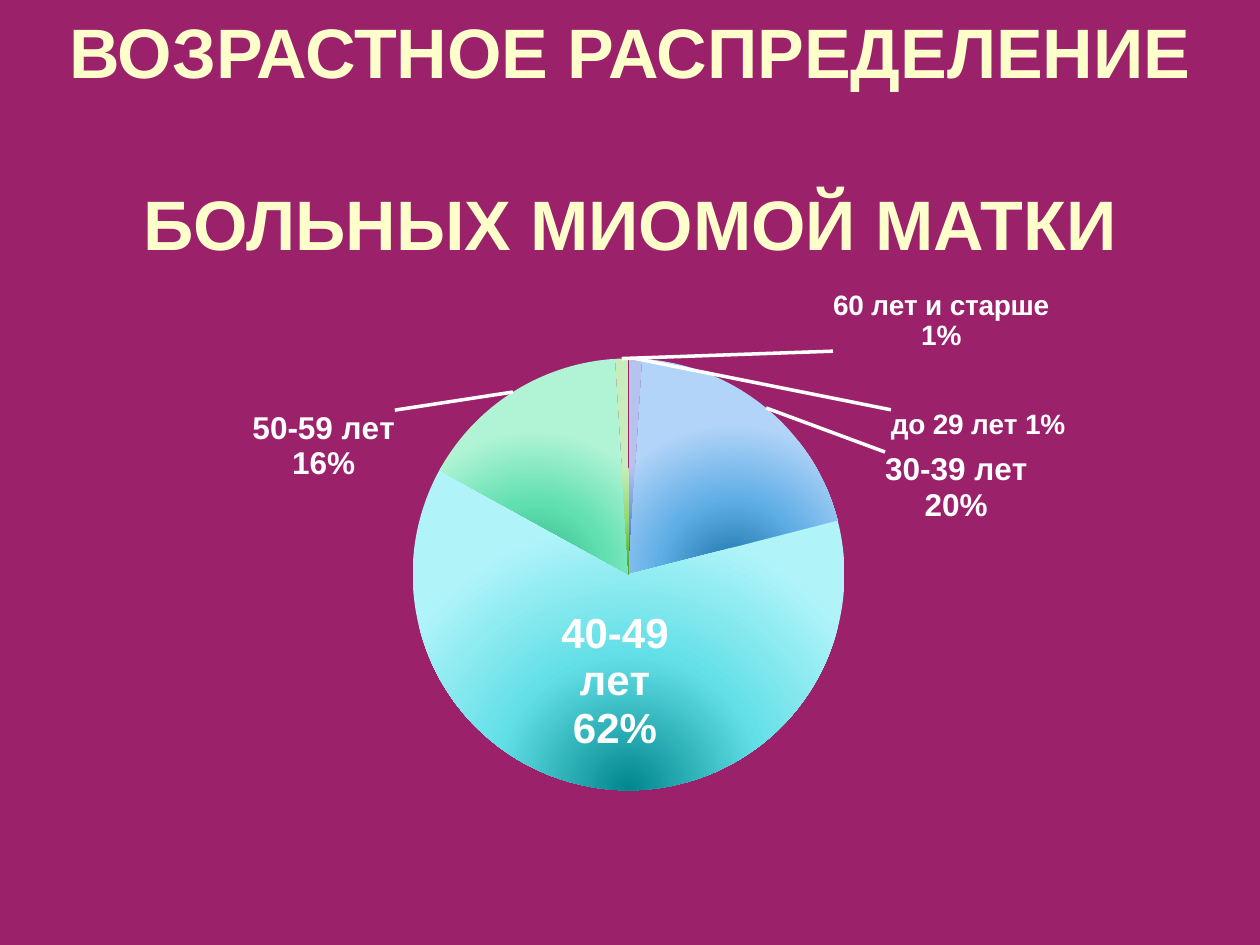
from pptx import Presentation
from pptx.chart.data import CategoryChartData as ChartData
from pptx.dml.color import RGBColor
from pptx.enum.chart import XL_CHART_TYPE as ChartType, XL_LABEL_POSITION as Place
from pptx.enum.text import MSO_ANCHOR as Anchor, PP_ALIGN as Align
from pptx.oxml import parse_xml
from pptx.oxml.ns import qn
from pptx.util import Pt

NAMESPACES = (
    'xmlns:c="http://schemas.openxmlformats.org/drawingml/2006/chart" '
    'xmlns:a="http://schemas.openxmlformats.org/drawingml/2006/main"'
)

# category, value, label, label size, label offset (share of chart), gradient dark to light
SLICES = [
    ("до 29 лет ", 1, "до 29 лет 1%", 16, (0.3, 0.14), ("2A50B0", "7090DA", "B5C3EE")),
    ("30-39 лет ", 20, "30-39 лет\n20%", 18, (0.1, 0.19), ("1572A6", "60AEE6", "B2D4F8")),
    ("40-49 лет ", 62, "40-49 лет\n62%", 24, None, ("00868E", "62DFE6", "B0F4FA")),
    ("50-59 лет ", 16, "50-59 лет\n16%", 18, (-0.1, 0.15), ("2EB086", "60DFB0", "B0F4D5")),
    ("60 лет и старше ", 1, "60 лет и старше\n1%", 16, (0.28, 0), ("3EA025", "90D870", "C8EDBD")),
]


def color(code):
    return RGBColor.from_string(code)


def layout(x, y, size=None):
    """Manual chart layout; with a size it places the inner plot area."""
    target = modes = extent = ""
    if size:
        target = '<c:layoutTarget val="inner"/>'
        modes = '<c:xMode val="edge"/><c:yMode val="edge"/>'
        extent = f'<c:w val="{size[0]}"/><c:h val="{size[1]}"/>'
    return parse_xml(
        f'<c:layout {NAMESPACES}><c:manualLayout>{target}{modes}'
        f'<c:x val="{x}"/><c:y val="{y}"/>{extent}</c:manualLayout></c:layout>'
    )


def bottom_glow(colors):
    """Round gradient that starts at the bottom centre of a slice."""
    stops = "".join(
        f'<a:gs pos="{step * 50000}"><a:srgbClr val="{code}"/></a:gs>'
        for step, code in enumerate(colors)
    )
    return parse_xml(
        f'<a:gradFill {NAMESPACES} rotWithShape="1"><a:gsLst>{stops}</a:gsLst>'
        '<a:path path="circle"><a:fillToRect l="50000" t="100000" r="50000" b="0"/></a:path>'
        '</a:gradFill>'
    )


class SlideBuilder:
    font = "Arial"
    background = "9B216B"
    title_color = "FFFFCC"
    label_color = "FFFFFF"

    def __init__(self, deck):
        self.page = deck.slides.add_slide(deck.slide_layouts[6])
        fill = self.page.background.fill
        fill.solid()
        fill.fore_color.rgb = color(self.background)

    def style(self, font, size, code):
        font.name, font.size, font.bold = self.font, Pt(size), True
        font.color.rgb = color(code)

    def title(self, lines, left, top, width, height):
        box = self.page.shapes.add_textbox(Pt(left), Pt(top), Pt(width), Pt(height))
        frame = box.text_frame
        frame.word_wrap = True
        frame.vertical_anchor = Anchor.TOP
        frame.margin_left = frame.margin_right = frame.margin_bottom = 0
        frame.margin_top = Pt(5)
        frame.text = "\n".join(lines)
        for index, para in enumerate(frame.paragraphs):
            para.alignment = Align.CENTER
            para.space_before = Pt(50 if index else 0)
            self.style(para.font, 40, self.title_color)

    def pie(self, slices, left, top, width, height):
        data = ChartData(number_format="0")
        data.categories = [entry[0] for entry in slices]
        data.add_series("Series 1", [entry[1] for entry in slices])
        chart = self.page.shapes.add_chart(
            ChartType.PIE, Pt(left), Pt(top), Pt(width), Pt(height), data
        ).chart
        chart.has_title = chart.has_legend = False
        chart.font.name, chart.font.size = "TeX Gyre Pagella", Pt(18)
        chart.font.color.rgb = color("000000")
        plot = chart.plots[0]
        plot.vary_by_categories = True

        # Pie circle
        area = chart._chartSpace.find(".//" + qn("c:plotArea"))
        for old in area.findall(qn("c:layout")):
            area.remove(old)
        area.insert(0, layout(0.3, 0.13, (0.38, 0.68)))

        # Shared label settings and leader lines
        series = plot.series[0]
        labels = series.data_labels
        labels.show_value = labels.show_category_name = True
        labels.number_format, labels.number_format_is_linked = "0", False
        self.style(labels.font, 18, self.label_color)
        self.leader_lines(labels._element)

        # Slices and their labels
        for point, (_, _, text, size, offset, colors) in zip(series.points, slices):
            point.format.line.fill.background()
            line = area.findall(".//" + qn("c:dPt"))[-1].find(qn("c:spPr"))
            line.insert(0, bottom_glow(colors))
            self.slice_label(point.data_label, text, size, offset)

    def leader_lines(self, labels):
        for old in labels.findall(qn("c:showLeaderLines")):
            labels.remove(old)
        labels.append(parse_xml(f'<c:showLeaderLines {NAMESPACES} val="1"/>'))
        labels.append(parse_xml(
            f'<c:leaderLines {NAMESPACES}><c:spPr><a:ln w="25400"><a:solidFill>'
            f'<a:srgbClr val="{self.label_color}"/></a:solidFill></a:ln></c:spPr></c:leaderLines>'
        ))

    def slice_label(self, label, text, size, offset):
        frame = label.text_frame
        frame.text = text
        for para in frame.paragraphs:
            for span in para.runs:
                self.style(span.font, size, self.label_color)
        label.position = Place.OUTSIDE_END if offset else Place.CENTER
        if offset:
            frame._txBody.getparent().getparent().insert(1, layout(*offset))


def main():
    deck = Presentation()
    deck.slide_width, deck.slide_height = Pt(720), Pt(540)
    slide = SlideBuilder(deck)

    # Heading
    slide.title(["ВОЗРАСТНОЕ РАСПРЕДЕЛЕНИЕ", "БОЛЬНЫХ МИОМОЙ МАТКИ"], 34, 0, 652, 142)

    # Age distribution
    slide.pie(SLICES, 39.6, 157.7, 652.3, 362.9)

    deck.save("out.pptx")


if __name__ == "__main__":
    main()
